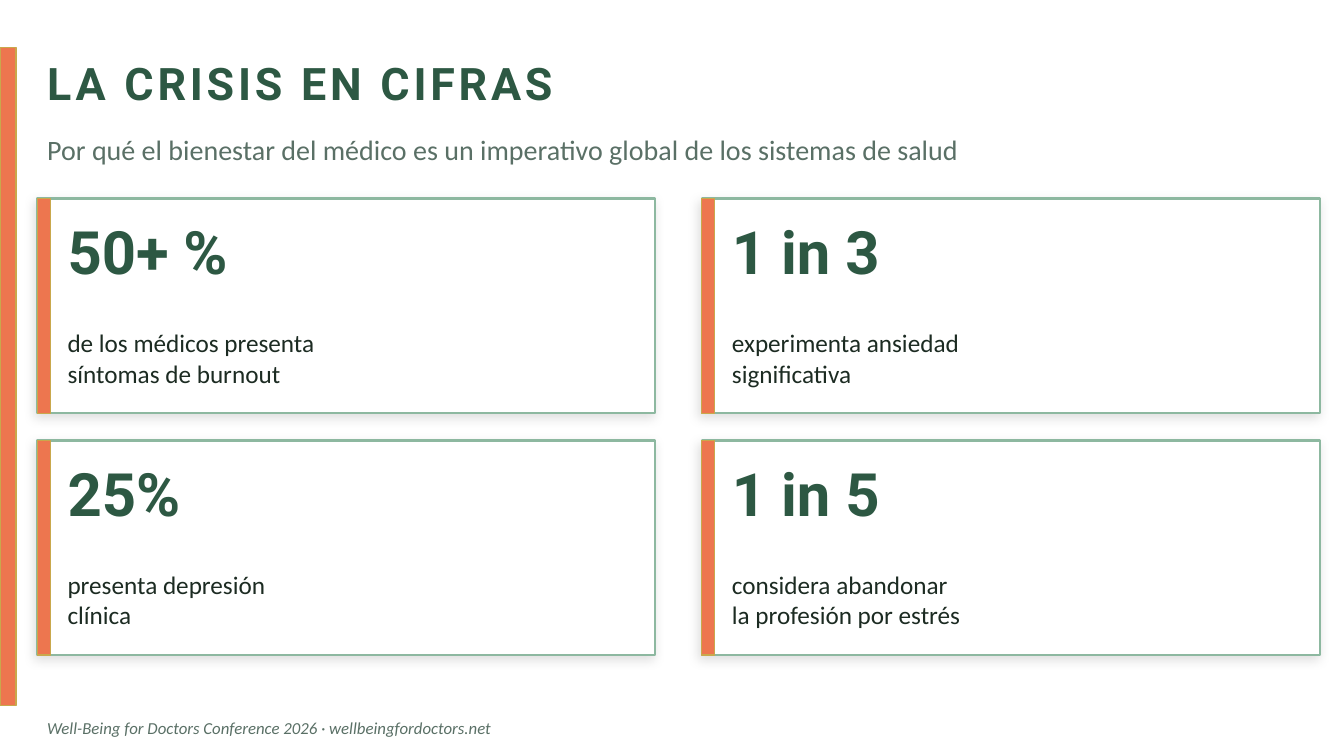
from lxml import etree
from pptx import Presentation
from pptx.dml.color import RGBColor
from pptx.enum.shapes import MSO_SHAPE
from pptx.enum.text import MSO_ANCHOR
from pptx.oxml.ns import qn
from pptx.util import Emu, Pt

RECTANGLE = MSO_SHAPE.RECTANGLE
TOP, MIDDLE = MSO_ANCHOR.TOP, MSO_ANCHOR.MIDDLE

TITLE = "LA CRISIS EN CIFRAS"
SUBTITLE = "Por qué el bienestar del médico es un imperativo global de los sistemas de salud"
FOOTER = "Well-Being for Doctors Conference 2026 · wellbeingfordoctors.net"
STATISTICS = [
    ("50+ %", ["de los médicos presenta", "síntomas de burnout"]),
    ("1 in 3", ["experimenta ansiedad", "significativa"]),
    ("25%", ["presenta depresión", "clínica"]),
    ("1 in 5", ["considera abandonar", "la profesión por estrés"]),
]

GREEN, GREY, INK = "2D5843", "5A7066", "1C2B22"
ORANGE, GOLD, SAGE, WHITE = "ED764F", "C9A84C", "8DB8A0", "FFFFFF"
HEADING_FONT, BODY_FONT = "Roboto", "Calibri"

PX = 9144  # 100 px to the inch
COLUMNS = 2
MARGIN, CARDS_TOP = 37, 197
CARD_WIDTH, CARD_HEIGHT = 613, 213
COLUMN_STEP, ROW_STEP = 659, 240
ACCENT_WIDTH = 13
TEXT_INDENT, TEXT_WIDTH = 30, 547


def color(value):
    return RGBColor.from_string(value)


def scaled(*lengths):
    return [Emu(length * PX) for length in lengths]


def add_rectangle(slide, place, fill, line, line_width):
    box = slide.shapes.add_shape(RECTANGLE, *scaled(*place))
    box.shadow.inherit = False
    box.fill.solid()
    box.fill.fore_color.rgb = color(fill)
    box.line.color.rgb = color(line)
    box.line.width = Pt(line_width)
    return box


def add_soft_shadow(box):
    effects = box._element.spPr.find(qn("a:effectLst"))
    shadow = etree.SubElement(effects, qn("a:outerShdw"), blurRad=str(Pt(8)),
                              dist=str(Pt(3)), dir=str(135 * 60000),
                              algn="bl", rotWithShape="0")
    tint = etree.SubElement(shadow, qn("a:srgbClr"), val="000000")
    etree.SubElement(tint, qn("a:alpha"), val="12000")


def add_text(slide, place, lines, font, size, ink, bold=False, italic=False,
             anchor=MIDDLE, inset=True, spacing=None):
    frame = slide.shapes.add_textbox(*scaled(*place)).text_frame
    frame.word_wrap = True
    frame.vertical_anchor = anchor
    if not inset:
        frame.margin_left = frame.margin_right = 0
        frame.margin_top = frame.margin_bottom = 0
    for index, line in enumerate(lines):
        para = frame.add_paragraph() if index else frame.paragraphs[0]
        span = para.add_run()
        span.text = line
        span.font.name = font
        span.font.size = Pt(size)
        span.font.bold = bold
        span.font.italic = italic
        span.font.color.rgb = color(ink)
        if spacing:
            span.font._element.set("spc", str(spacing))


def add_card(slide, left, top, figure, description):
    card = add_rectangle(slide, (left, top, CARD_WIDTH, CARD_HEIGHT), WHITE, SAGE, 1.5)
    add_soft_shadow(card)
    add_rectangle(slide, (left, top, ACCENT_WIDTH, CARD_HEIGHT), ORANGE, GOLD, 1)
    text_left = left + TEXT_INDENT
    add_text(slide, (text_left, top + 16, TEXT_WIDTH, 87), [figure],
             HEADING_FONT, 42.7, GREEN, bold=True, anchor=TOP, inset=False)
    add_text(slide, (text_left, top + 110, TEXT_WIDTH, 96), description,
             BODY_FONT, 18, INK, inset=False)


def main():
    deck = Presentation()
    deck.slide_width, deck.slide_height = scaled(1333, 750)
    slide = deck.slides.add_slide(deck.slide_layouts[6])

    add_rectangle(slide, (0, 47, 16, 653), ORANGE, GOLD, 1)
    add_text(slide, (MARGIN, 47, 1067, 69), [TITLE], HEADING_FONT, 32, GREEN,
             bold=True, spacing=270)
    add_text(slide, (MARGIN, 123, 1133, 51), [SUBTITLE], BODY_FONT, 20, GREY)
    for index, (figure, description) in enumerate(STATISTICS):
        row, column = divmod(index, COLUMNS)
        add_card(slide, MARGIN + column * COLUMN_STEP, CARDS_TOP + row * ROW_STEP,
                 figure, description)
    add_text(slide, (MARGIN, 704, 1253, 35), [FOOTER], BODY_FONT, 12, GREY, italic=True)

    deck.save("out.pptx")


if __name__ == "__main__":
    main()
